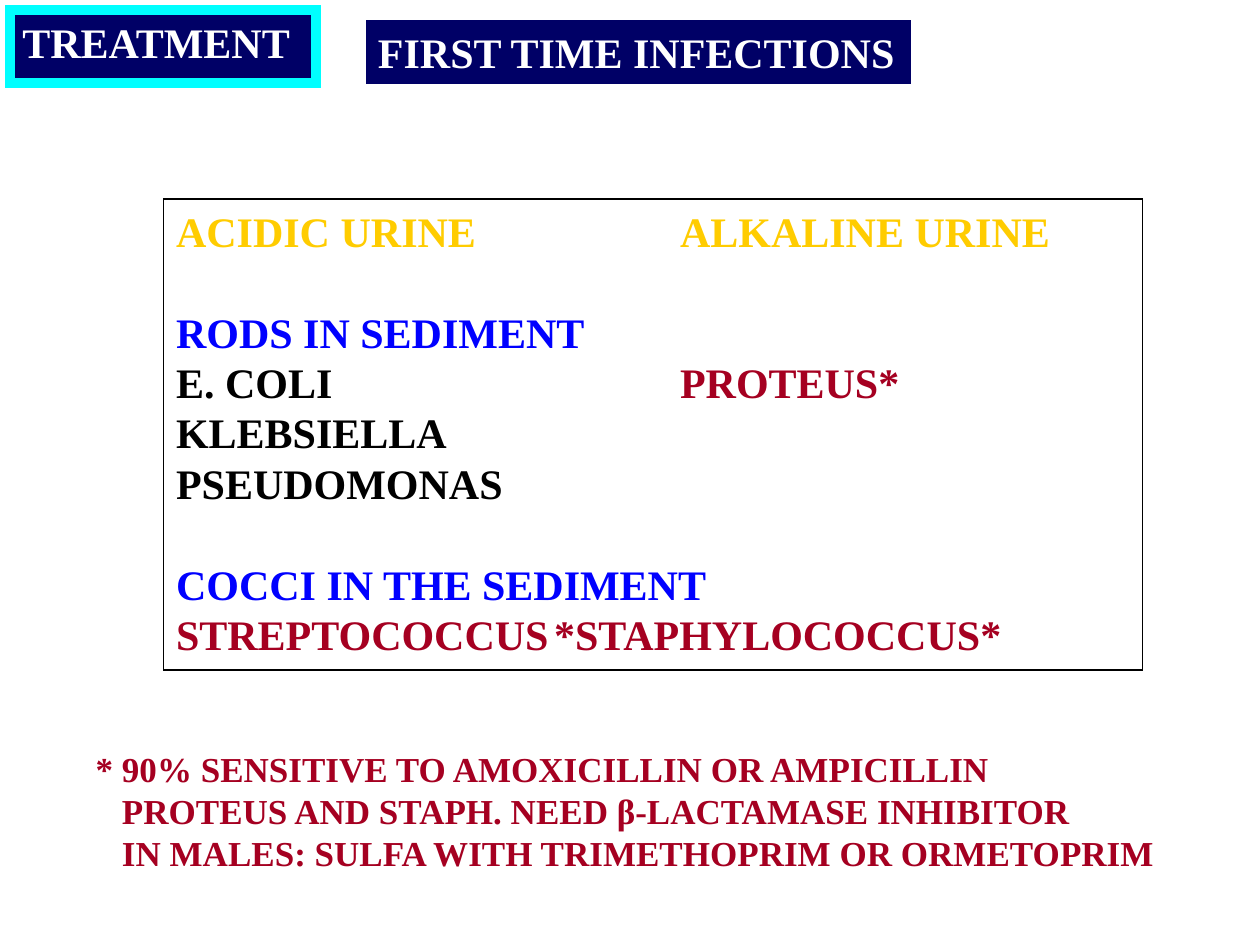
"""Build a slide on treating first time urinary infections."""
from lxml.etree import SubElement
from pptx import Presentation
from pptx.dml.color import RGBColor
from pptx.enum.shapes import MSO_SHAPE
from pptx.enum.text import MSO_ANCHOR, MSO_AUTO_SIZE, PP_ALIGN
from pptx.oxml.ns import qn
from pptx.util import Cm, Pt

COLORS = {"navy": "000066", "cyan": "00FFFF", "white": "FFFFFF", "black": "000000",
          "gold": "FFCC00", "blue": "0000FF", "red": "A50021"}
FRAME = {"word_wrap": True, "auto_size": MSO_AUTO_SIZE.NONE, "vertical_anchor": MSO_ANCHOR.TOP,
         "margin_left": Cm(0.25), "margin_top": Cm(0.13), "margin_right": 0, "margin_bottom": Cm(0.13)}


def rgb(name):
    return RGBColor.from_string(COLORS[name])


def fill_box(sp, box, fill, line, width, size, lines):
    for name, value in zip(("left", "top", "width", "height"), box):
        setattr(sp, name, Cm(value))
    sp.fill.solid()
    sp.fill.fore_color.rgb = rgb(fill)
    sp.line.color.rgb = rgb(line)
    sp.line.width = Pt(width)
    SubElement(sp.line._get_or_add_ln(), qn("a:miter"), lim="800000")
    tf = sp.text_frame
    for name, value in FRAME.items():
        setattr(tf, name, value)
    for i, (runs, gap, tab, margin) in enumerate(lines):
        p = tf.add_paragraph() if i else tf.paragraphs[0]
        spacing = {"alignment": PP_ALIGN.LEFT, "line_spacing": Pt(size * 1.2),
                   "space_before": Pt(size * 1.2 * gap), "space_after": Pt(0)}
        for name, value in spacing.items():
            setattr(p, name, value)
        pPr = p._p.get_or_add_pPr()
        pPr.set("marL", str(Cm(margin)))
        pPr.set("indent", "0")
        if tab:
            pPr.set("defTabSz", str(Cm(tab)))
            tabs = SubElement(pPr, qn("a:tabLst"))
            SubElement(tabs, qn("a:tab"), pos=str(Cm(tab)), algn="l")
        for text, color in runs:
            r = p.add_run()
            r.text = text
            font = {"name": "Times New Roman", "size": Pt(size), "bold": True}
            for name, value in font.items():
                setattr(r.font, name, value)
            r.font.color.rgb = rgb(color)


prs = Presentation()
prs.slide_width, prs.slide_height = Cm(25.4), Cm(19.05)
s = prs.slides.add_slide(prs.slide_layouts[5])

fill_box(s.shapes.title, (0.2, 0.2, 6.17, 1.47), "navy", "cyan", 6, 24,
         [([("TREATMENT", "white")], 0, 0, 0)])

organisms = [
    ([("ACIDIC URINE\tALKALINE URINE", "gold")], 0, 10.16, 0),
    ([("RODS IN SEDIMENT", "blue")], 1, 0, 0),
    ([("E. COLI\t", "black"), ("PROTEUS*", "red")], 0, 10.16, 0),
    ([("KLEBSIELLA", "black")], 0, 0, 0),
    ([("PSEUDOMONAS", "black")], 0, 0, 0),
    ([("COCCI IN THE SEDIMENT", "blue")], 1, 0, 0),
    ([("STREPTOCOCCUS\t*STAPHYLOCOCCUS*", "red")], 0, 7.62, 0),
]
notes = [
    ([("* 90% SENSITIVE TO AMOXICILLIN OR AMPICILLIN", "red")], 0, 0, 0),
    ([("PROTEUS AND STAPH. NEED β-LACTAMASE INHIBITOR", "red")], 0, 0, 0.53),
    ([("IN MALES: SULFA WITH TRIMETHOPRIM OR ORMETOPRIM", "red")], 0, 0, 0.53),
]
heading = [([("FIRST TIME INFECTIONS", "white")], 0, 0, 0)]

for box, fill, line, size, lines in (
        ((3.3, 4.01, 19.74, 9.5), "white", "black", 24, organisms),
        ((1.68, 14.94, 21.97, 2.82), "white", "white", 20, notes),
        ((7.37, 0.4, 11, 1.3), "navy", "white", 24, heading)):
    sp = s.shapes.add_shape(MSO_SHAPE.RECTANGLE, 0, 0, 0, 0)
    sp.shadow.inherit = False
    fill_box(sp, box, fill, line, 0.75, size, lines)

prs.save("out.pptx")
